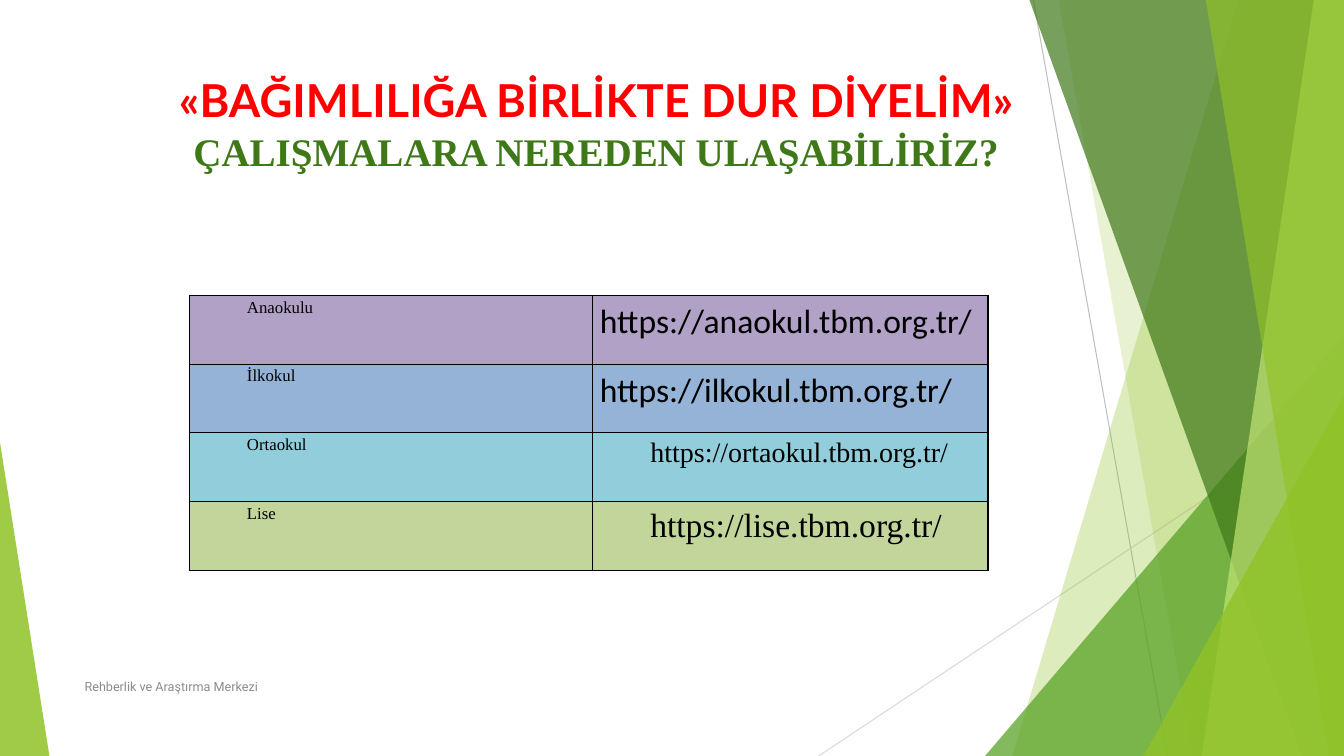
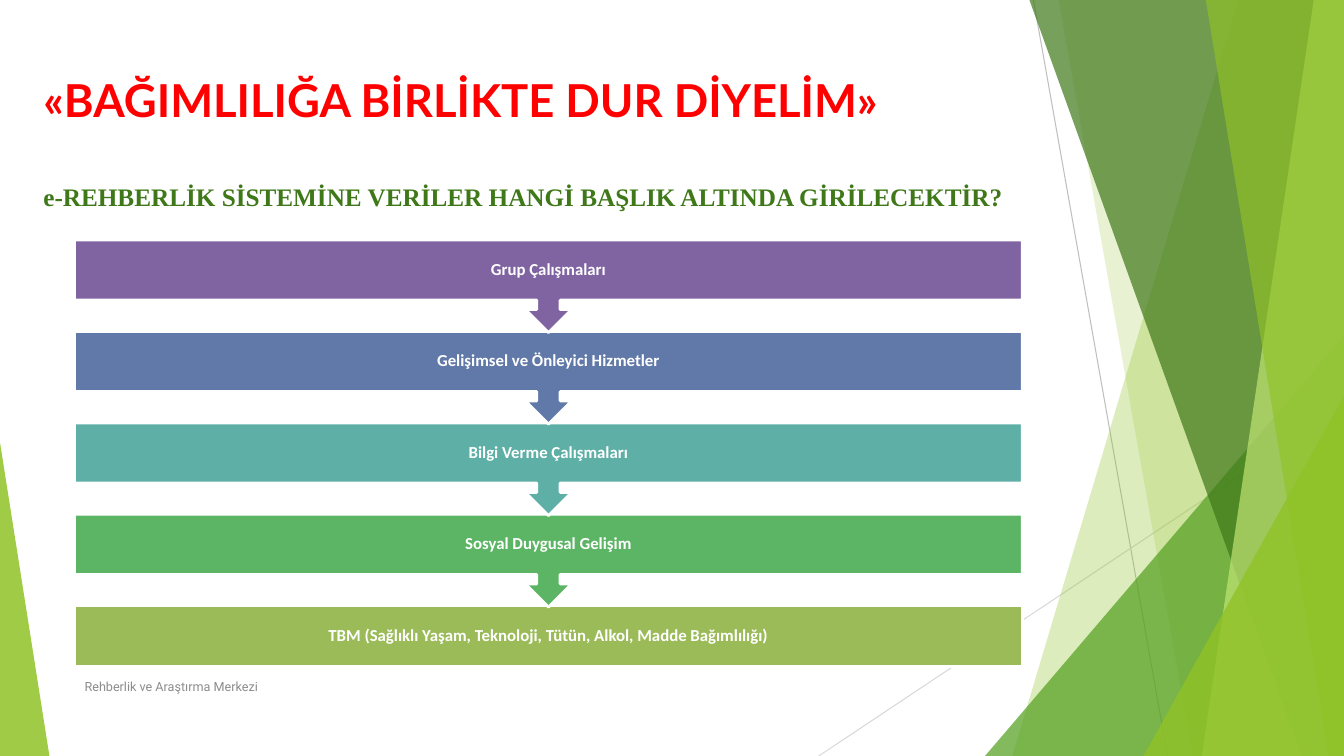
from dataclasses import dataclass

from lxml import etree
from pptx import Presentation
from pptx import util as u
from pptx.dml import color
from pptx.enum import shapes, text
from pptx.oxml import ns


@dataclass(frozen=True)
class Theme:
    """Colours, fonts and type sizes shared by the slides."""
    red: str = "FF0000"
    dark_green: str = "3F7819"
    green: str = "54A021"
    lime: str = "90C226"
    pale_lime: str = "C0E474"
    dark_rule: str = "BFBFBF"
    light_rule: str = "D9D9D9"
    black: str = "000000"
    white: str = "FFFFFF"
    footer_grey: str = "8C8C8C"
    levels: tuple = ("B2A1C7", "95B3D7", "92CDDC", "C2D69B")
    steps: tuple = ("8064A2", "6179A8", "5EAFA6", "5CB565", "9BBB59")
    slogan_font: str = "Lato"
    serif: str = "Times New Roman"
    sans: str = "Calibri"
    footer_font: str = "Roboto"
    slogan_size: float = 32.4
    question_large: float = 27.9
    question_small: float = 18
    link_large: float = 24
    link_small: float = 20
    body_size: float = 12
    footer_size: float = 9


THEME = Theme()
WIDTH, HEIGHT = 13.33, 7.5
SLOGAN = "«BAĞIMLILIĞA BİRLİKTE DUR DİYELİM»"
FOOTER = "Rehberlik ve Araştırma Merkezi"
FOOTER_BOX = (0.74, 6.61, 6.89, 0.4)

SCHOOL_LINKS = (
    ("Anaokulu", "https://anaokul.tbm.org.tr/", THEME.sans, THEME.link_large, 0),
    ("İlkokul", "https://ilkokul.tbm.org.tr/", THEME.sans, THEME.link_large, 0),
    ("Ortaokul", "https://ortaokul.tbm.org.tr/", THEME.serif, THEME.link_small, 0.5),
    ("Lise", "https://lise.tbm.org.tr/", THEME.serif, THEME.link_large, 0.5),
)
HEADINGS = (
    "Grup Çalışmaları",
    "Gelişimsel ve Önleyici Hizmetler",
    "Bilgi Verme Çalışmaları",
    "Sosyal Duygusal Gelişim",
    "TBM (Sağlıklı Yaşam, Teknoloji, Tütün, Alkol, Madde Bağımlılığı)",
)


def rgb(value):
    """Turn a hex string into a colour."""
    return color.RGBColor.from_string(value)


def inches(box):
    """Convert a box of plain numbers to lengths."""
    return [u.Inches(side) for side in box]


def style(paragraph, font, size, tint, bold=False):
    """Format every run of a paragraph."""
    for run in paragraph.runs:
        run.font.name = font
        run.font.size = u.Pt(size)
        run.font.color.rgb = rgb(tint)
        run.font.bold = bold


def paint(shape, tint, opacity=100):
    """Give a shape a flat fill without outline or shadow."""
    shape.shadow.inherit = False
    shape.fill.solid()
    shape.fill.fore_color.rgb = rgb(tint)
    shape.line.fill.background()
    if opacity < 100:
        for node in shape.element.iter(ns.qn("a:srgbClr")):
            etree.SubElement(node, ns.qn("a:alpha"), val=str(opacity * 1000))


def add_rule(group, start, end, tint):
    """Draw a thin straight line."""
    rule = group.shapes.add_connector(
        shapes.MSO_CONNECTOR.STRAIGHT, *inches(start + end))
    rule.line.color.rgb = rgb(tint)
    rule.line.width = u.Pt(0.75)
    etree.SubElement(rule.element.spPr, ns.qn("a:effectLst"))


def add_band(group, top_x, bottom_x, tint, opacity):
    """Draw a slanted band that reaches the right edge."""
    corners = [(top_x, 0), (WIDTH, 0), (WIDTH, HEIGHT), (bottom_x, HEIGHT)]
    first, *others = [inches(corner) for corner in corners]
    builder = group.shapes.build_freeform(*first)
    builder.add_line_segments(others, close=True)
    paint(builder.convert_to_shape(), tint, opacity)


def add_wedge(group, left, top, width, apex, tint, opacity):
    """Draw a triangle standing on the bottom edge."""
    wedge = group.shapes.add_shape(
        shapes.MSO_SHAPE.ISOSCELES_TRIANGLE,
        *inches((left, top, width, HEIGHT - top)))
    wedge.adjustments[0] = apex
    paint(wedge, tint, opacity)


def add_backdrop(slide):
    """Draw the facets and move them to the layout of the slide."""
    group = slide.shapes.add_group_shape()
    add_rule(group, (10.25, 0), (11.58, HEIGHT), THEME.dark_rule)
    add_rule(group, (WIDTH, 4.03), (8.12, HEIGHT), THEME.light_rule)
    add_band(group, 12.28, 10.04, THEME.lime, 30)
    add_band(group, 10.5, 11.83, THEME.lime, 20)
    add_wedge(group, 9.77, 3.33, 3.56, 1, THEME.green, 72)
    add_band(group, 10.21, 12.91, THEME.dark_green, 70)
    add_band(group, 13.03, 11.92, THEME.pale_lime, 70)
    add_band(group, 11.96, 13.18, THEME.lime, 65)
    add_wedge(group, 11.34, 3.93, 1.99, 1, THEME.lime, 80)
    add_wedge(group, 0, 4.39, 0.49, 0, THEME.lime, 85)
    for number, node in enumerate(group.element.iter(ns.qn("p:cNvPr")), 100):
        node.set("id", str(number))
    slide.slide_layout.shapes.element.append(group.element)


def add_title(slide, box, question, size, gap, align):
    """Place the slogan and the question below it in the title."""
    title = slide.shapes.title
    title.left, title.top, title.width, title.height = inches(box)
    frame = title.text_frame
    frame.text = f"{SLOGAN}\n{question}"
    frame.auto_size = text.MSO_AUTO_SIZE.NONE
    frame.vertical_anchor = text.MSO_ANCHOR.TOP
    slogan, query = frame.paragraphs
    slogan.alignment = query.alignment = align
    query.space_before = u.Pt(gap)
    style(slogan, THEME.slogan_font, THEME.slogan_size, THEME.red, True)
    style(query, THEME.serif, size, THEME.dark_green, True)


def add_footer(slide, box):
    """Write the name of the centre at the foot of the slide."""
    frame = slide.shapes.add_textbox(*inches(box)).text_frame
    frame.word_wrap = True
    frame.vertical_anchor = text.MSO_ANCHOR.MIDDLE
    frame.text = FOOTER
    style(frame.paragraphs[0], THEME.footer_font, THEME.footer_size,
          THEME.footer_grey)


def add_borders(cell):
    """Outline a table cell in black."""
    properties = cell._tc.get_or_add_tcPr()
    for side in ("a:lnL", "a:lnR", "a:lnT", "a:lnB"):
        edge = etree.SubElement(properties, ns.qn(side), w=str(u.Pt(1)))
        fill = etree.SubElement(edge, ns.qn("a:solidFill"))
        etree.SubElement(fill, ns.qn("a:srgbClr"), val=THEME.black)


def fill_cell(cell, words, font, size, indent, tint):
    """Write and format one table cell."""
    cell.text_frame.text = words
    cell.margin_left = cell.margin_right = u.Inches(0.07)
    cell.margin_top = cell.margin_bottom = 0
    paragraph = cell.text_frame.paragraphs[0]
    paragraph.line_spacing = 1.15
    if indent:
        properties = paragraph._p.get_or_add_pPr()
        properties.set("marL", str(u.Inches(indent)))
        properties.set("indent", "0")
    style(paragraph, font, size, THEME.black)
    add_borders(cell)
    cell.fill.solid()
    cell.fill.fore_color.rgb = rgb(tint)


def add_link_table(slide, box):
    """List the address for each school level."""
    table = slide.shapes.add_table(len(SCHOOL_LINKS), 2, *inches(box)).table
    table.first_row = table.horz_banding = False
    table.columns[0].width = u.Inches(4)
    table.columns[1].width = u.Inches(box[2] - 4)
    for row, (level, link, font, size, indent) in enumerate(SCHOOL_LINKS):
        tint = THEME.levels[row]
        label = table.cell(row, 0)
        fill_cell(label, level, THEME.serif, THEME.body_size, 0.5, tint)
        label.text_frame.paragraphs[0].alignment = text.PP_ALIGN.JUSTIFY
        fill_cell(table.cell(row, 1), link, font, size, indent, tint)


def add_heading_flow(slide, box):
    """Stack the headings, each pointing to the next."""
    left, top, width, height = box
    bar = 0.6
    last = len(HEADINGS) - 1
    pitch = (height - bar) / last
    for index in range(last, -1, -1):
        is_last = index == last
        kind = (shapes.MSO_SHAPE.RECTANGLE if is_last
                else shapes.MSO_SHAPE.DOWN_ARROW_CALLOUT)
        step = slide.shapes.add_shape(kind, *inches(
            (left, top + index * pitch, width, bar if is_last else 0.92)))
        paint(step, THEME.steps[index])
        step.line.color.rgb = rgb(THEME.white)
        step.line.width = u.Pt(2)
        frame = step.text_frame
        frame.text = HEADINGS[index]
        frame.word_wrap = True
        frame.vertical_anchor = text.MSO_ANCHOR.MIDDLE
        frame.margin_left = frame.margin_right = u.Inches(0.09)
        frame.margin_top = frame.margin_bottom = u.Inches(0.09)
        heading = frame.paragraphs[0]
        heading.alignment = text.PP_ALIGN.CENTER
        heading.line_spacing = 0.9
        style(heading, THEME.sans, THEME.body_size, THEME.white, True)


def build_links_slide(slide):
    """Show where the materials can be found."""
    add_title(slide, (0.74, 0.67, 10.35, 1.44),
              "ÇALIŞMALARA NEREDEN ULAŞABİLİRİZ?",
              THEME.question_large, 0, text.PP_ALIGN.CENTER)
    add_link_table(slide, (1.88, 2.93, 7.92, 2.73))
    add_footer(slide, FOOTER_BOX)


def build_headings_slide(slide):
    """Show the headings under which data are entered."""
    add_title(slide, (0.33, 0.67, 11.38, 1.44),
              "e-REHBERLİK SİSTEMİNE VERİLER HANGİ BAŞLIK ALTINDA GİRİLECEKTİR?",
              THEME.question_small, 39, text.PP_ALIGN.LEFT)
    add_heading_flow(slide, (0.74, 2.38, 9.4, 4.23))
    add_footer(slide, FOOTER_BOX)


def main():
    """Build and save the presentation."""
    deck = Presentation()
    deck.slide_width, deck.slide_height = inches((WIDTH, HEIGHT))
    layout = deck.slide_layouts.get_by_name("Title Only")
    links, headings = [deck.slides.add_slide(layout) for _ in range(2)]
    add_backdrop(links)
    build_links_slide(links)
    build_headings_slide(headings)
    deck.save("out.pptx")


if __name__ == "__main__":
    main()
